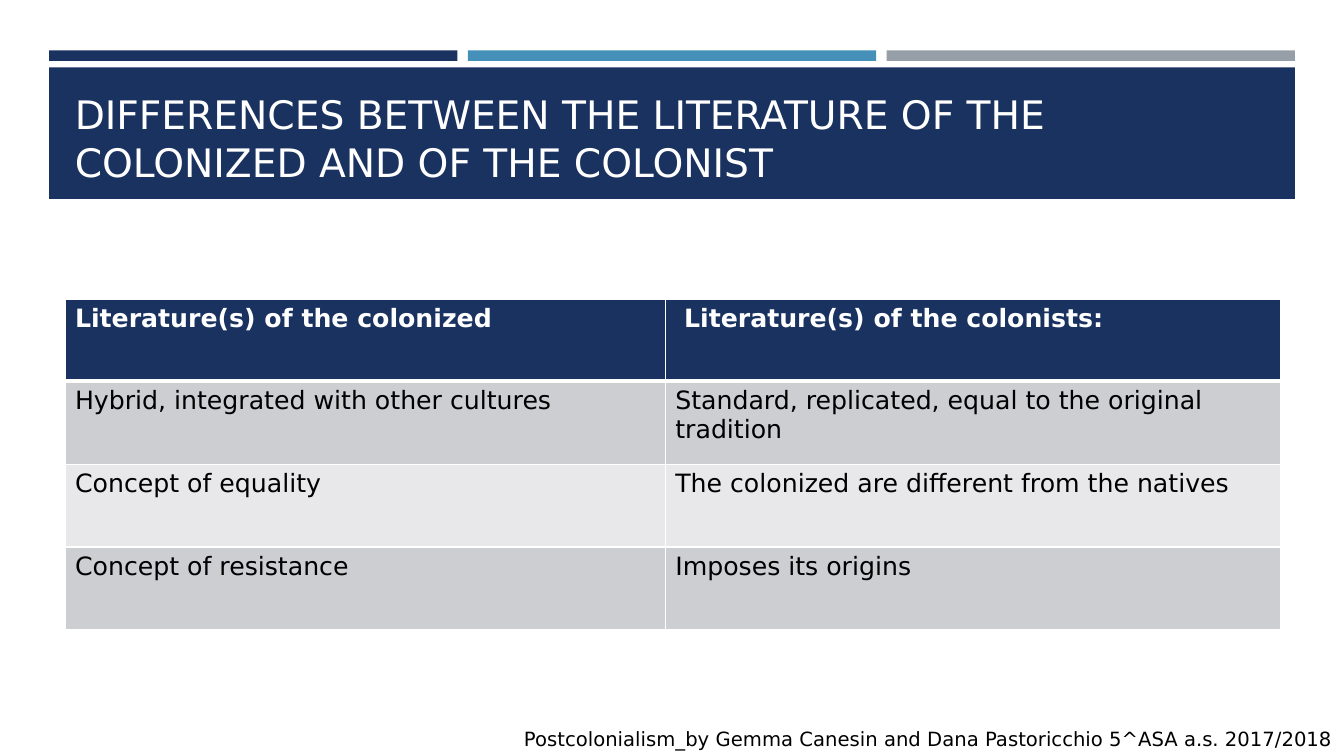
import pptx
import pptx.dml.color
import pptx.enum.shapes
import pptx.enum.text
import pptx.oxml
import pptx.oxml.ns
import pptx.util

Pt = pptx.util.Pt
FONT = "DejaVu Sans"
NAVY, BLUE, GREY, WHITE, BLACK = "1A3260", "4590B8", "969FA7", "FFFFFF", "000000"
ROW_FILLS = ["CDCED2", "E8E8EA"]
COMPARISON = [
    ("Literature(s) of the colonized ", " Literature(s) of the colonists: "),
    ("Hybrid, integrated with other cultures",
     "Standard, replicated, equal to the original tradition"),
    ("Concept of equality", "The colonized are different from the natives"),
    ("Concept of resistance", "Imposes its origins"),
]


def color(hex_code):
    """Turn a hex string into a colour."""
    return pptx.dml.color.RGBColor.from_string(hex_code)


def write(frame, text, size=18, fill=BLACK, bold=False, wrap=True,
          anchor=pptx.enum.text.MSO_ANCHOR.TOP):
    """Put formatted, left-aligned text into a text frame."""
    frame.word_wrap = wrap
    frame.vertical_anchor = anchor
    paragraph = frame.paragraphs[0]
    paragraph.alignment = pptx.enum.text.PP_ALIGN.LEFT
    run = paragraph.add_run()
    run.text = text
    run.font.name, run.font.size, run.font.bold = FONT, Pt(size), bold
    run.font.color.rgb = color(fill)


def add_bar(slide, left, top, width, height, fill):
    """Draw a plain filled rectangle."""
    bar = slide.shapes.add_shape(pptx.enum.shapes.MSO_SHAPE.RECTANGLE,
                                 Pt(left), Pt(top), Pt(width), Pt(height))
    bar.shadow.inherit = False
    bar.fill.solid()
    bar.fill.fore_color.rgb = color(fill)
    bar.line.fill.background()


def add_header(slide, left, top, width, height, heading):
    """Draw three accent bars above a band that carries the title."""
    gap, accent_height, band_offset = 7.5, 7.5, 12.2
    accent_width = (width - 2 * gap) / 3
    for index, fill in enumerate([NAVY, BLUE, GREY]):
        add_bar(slide, left + index * (accent_width + gap), top,
                accent_width, accent_height, fill)
    band_top, band_height = top + band_offset, height - band_offset
    add_bar(slide, left, band_top, width, band_height, NAVY)
    title = slide.shapes.title
    title.left, title.top = Pt(left + 11.2), Pt(band_top + 7.2)
    title.width, title.height = Pt(width - 22.4), Pt(band_height - 13.7)
    write(title.text_frame, heading, size=28, fill=WHITE,
          anchor=pptx.enum.text.MSO_ANCHOR.BOTTOM)
    title.element.getparent().append(title.element)


def set_borders(cell, **widths):
    """Give the cell white borders of the given widths in points."""
    properties = cell._tc.get_or_add_tcPr()
    for position, (side, width) in enumerate(widths.items()):
        properties.insert(position, pptx.oxml.parse_xml(
            f'<a:{side} {pptx.oxml.ns.nsdecls("a")} w="{Pt(width)}"><a:solidFill>'
            f'<a:srgbClr val="{WHITE}"/></a:solidFill></a:{side}>'))


def add_comparison(slide, left, top, width, height, rows):
    """Place the two-column comparison table."""
    table = slide.shapes.add_table(len(rows), 2, Pt(left), Pt(top),
                                   Pt(width), Pt(height)).table
    first_width, header_height = 428.8, 58.4
    table.columns[0].width = Pt(first_width)
    table.columns[1].width = Pt(width - first_width)
    for row_index, texts in enumerate(rows):
        is_header = row_index == 0
        table.rows[row_index].height = Pt(
            header_height if is_header else (height - header_height) / (len(rows) - 1))
        for column_index, text in enumerate(texts):
            cell = table.cell(row_index, column_index)
            cell.fill.solid()
            cell.fill.fore_color.rgb = color(
                NAVY if is_header else ROW_FILLS[(row_index - 1) % 2])
            write(cell.text_frame, text, fill=WHITE if is_header else BLACK,
                  bold=is_header)
            set_borders(cell, lnL=1, lnR=1, lnT=3 if row_index == 1 else 1,
                        lnB=3 if is_header else 1)


def add_footer(slide, left, top, width, height, credit):
    """Place the authors' line at the foot of the slide."""
    footer = slide.shapes.add_textbox(Pt(left), Pt(top), Pt(width), Pt(height))
    write(footer.text_frame, credit, size=14, wrap=False)


def main():
    """Build and save the slide."""
    deck = pptx.Presentation()
    deck.slide_width, deck.slide_height = Pt(960), Pt(540)
    slide = deck.slides.add_slide(deck.slide_layouts[5])
    add_header(slide, 35, 36, 890, 106.2,
               "DIFFERENCES BETWEEN THE LITERATURE OF THE COLONIZED AND OF THE COLONIST")
    add_comparison(slide, 46.4, 214, 868.6, 236, COMPARISON)
    add_footer(slide, 367.2, 516, 592.8, 24,
               "Postcolonialism_by Gemma Canesin and Dana Pastoricchio 5^ASA a.s. 2017/2018")
    deck.save("out.pptx")


if __name__ == "__main__":
    main()
